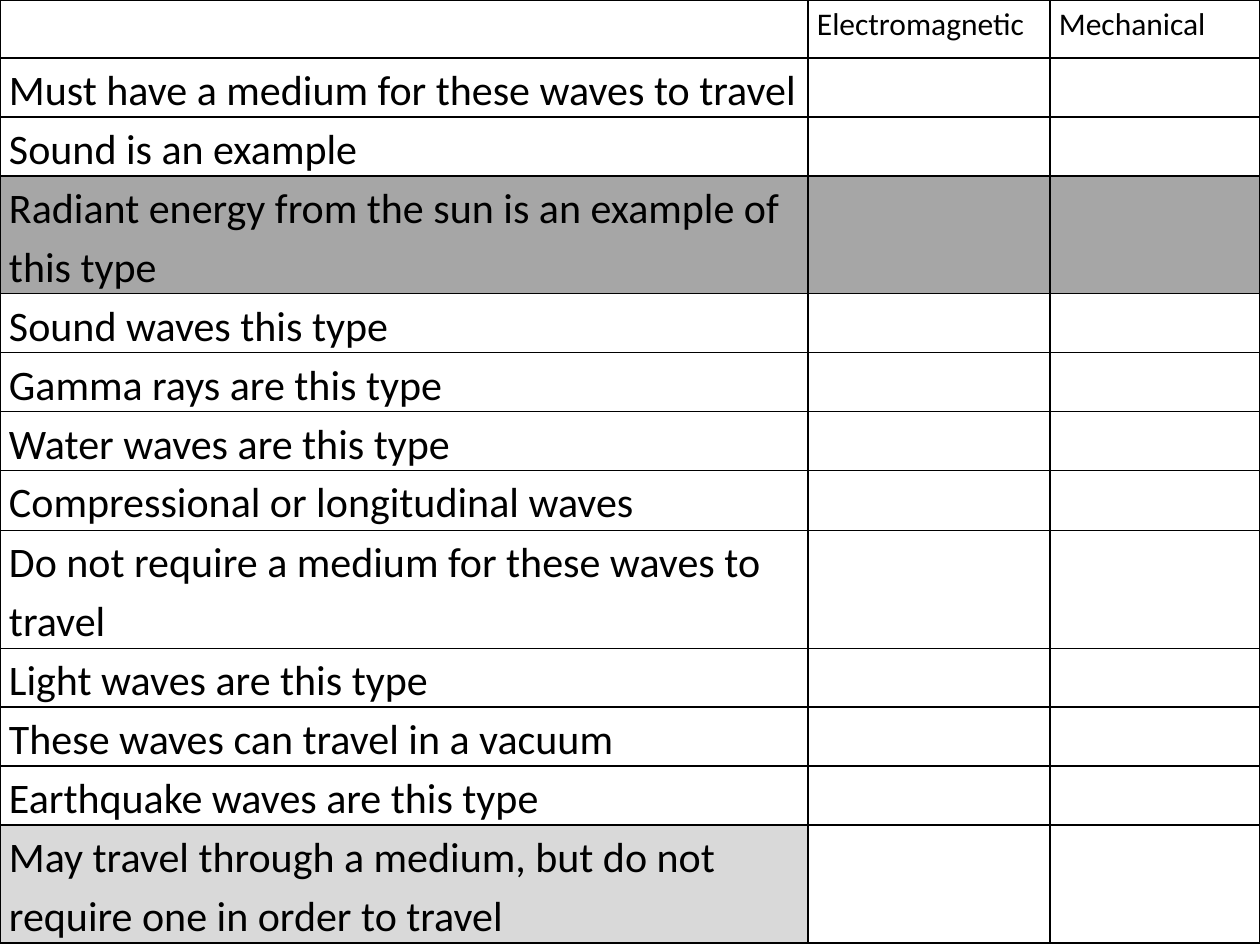
import dataclasses

import pptx
import pptx.dml.color
import pptx.oxml
import pptx.oxml.ns
import pptx.util

EMU_PER_PX = 914400 // 126


def px(length):
    return pptx.util.Emu(length * EMU_PER_PX)


@dataclasses.dataclass(frozen=True)
class Theme:
    font: str = "Calibri"
    ink: str = "000000"
    dark_band: str = "A6A6A6"
    light_band: str = "D9D9D9"
    heading_size: int = 18
    statement_size: int = 24
    line_spacing: float = 1.15
    border_width: int = 1


THEME = Theme()
COLUMN_WIDTHS = [808, 242, 210]
ROW_HEIGHT = 58
HEADINGS = ["", "Electromagnetic", "Mechanical"]
STATEMENTS = [
    "Must have a medium for these waves to travel",
    "Sound is an example",
    "Radiant energy from the sun is an example of this type",
    "Sound waves this type",
    "Gamma rays are this type",
    "Water waves are this type",
    "Compressional or longitudinal waves",
    "Do not require a medium for these waves to travel",
    "Light waves are this type",
    "These waves can travel in a vacuum",
    "Earthquake waves are this type",
    "May travel through a medium, but do not require one in order to travel",
]
ROW_HEIGHTS = {3: 116, 7: 60, 8: 116, 12: 116}
CELL_FILLS = {(3, column): THEME.dark_band for column in range(3)}
CELL_FILLS[12, 0] = THEME.light_band


class SlideBuilder:
    def __init__(self, presentation, theme):
        self.theme = theme
        self.slide = presentation.slides.add_slide(presentation.slide_layouts[6])

    def add_table(self, rows, column_widths, row_heights, fills):
        heights = [row_heights.get(index, ROW_HEIGHT) for index in range(len(rows))]
        table = self.slide.shapes.add_table(
            len(rows), len(column_widths), 0, 0,
            px(sum(column_widths)), px(sum(heights)),
        ).table
        for option in ("first_row", "horz_banding"):
            setattr(table, option, False)
        for column, width in zip(table.columns, column_widths):
            column.width = px(width)
        for row_index, (row, height) in enumerate(zip(rows, heights)):
            table.rows[row_index].height = px(height)
            size = self.theme.statement_size if row_index else self.theme.heading_size
            for column_index, text in enumerate(row):
                cell = table.cell(row_index, column_index)
                self.fill_cell(cell, fills.get((row_index, column_index)))
                self.add_borders(cell)
                if text:
                    self.write_cell(cell, text, size)

    def fill_cell(self, cell, color):
        if color:
            cell.fill.solid()
            cell.fill.fore_color.rgb = pptx.dml.color.RGBColor.from_string(color)
        else:
            cell.fill.background()

    def add_borders(self, cell):
        properties = cell._tc.get_or_add_tcPr()
        width = pptx.util.Pt(self.theme.border_width)
        for position, side in enumerate(("lnL", "lnR", "lnT", "lnB")):
            border = pptx.oxml.parse_xml(
                f'<a:{side} {pptx.oxml.ns.nsdecls("a")} w="{width}"><a:solidFill>'
                f'<a:srgbClr val="{self.theme.ink}"/></a:solidFill></a:{side}>'
            )
            properties.insert(position, border)

    def write_cell(self, cell, text, size):
        margins = {"margin_left": 9, "margin_right": 9, "margin_top": 0, "margin_bottom": 0}
        for name, length in margins.items():
            setattr(cell, name, px(length))
        paragraph = cell.text_frame.paragraphs[0]
        paragraph.line_spacing = self.theme.line_spacing
        run = paragraph.add_run()
        run.text = text
        font_format = {"name": self.theme.font, "size": pptx.util.Pt(size), "bold": False}
        for name, value in font_format.items():
            setattr(run.font, name, value)
        run.font.color.rgb = pptx.dml.color.RGBColor.from_string(self.theme.ink)


def main():
    presentation = pptx.Presentation()
    presentation.slide_width = pptx.util.Inches(10)
    presentation.slide_height = pptx.util.Inches(7.5)
    builder = SlideBuilder(presentation, THEME)
    rows = [HEADINGS] + [[statement, "", ""] for statement in STATEMENTS]
    builder.add_table(rows, COLUMN_WIDTHS, ROW_HEIGHTS, CELL_FILLS)
    presentation.save("out.pptx")


if __name__ == "__main__":
    main()
